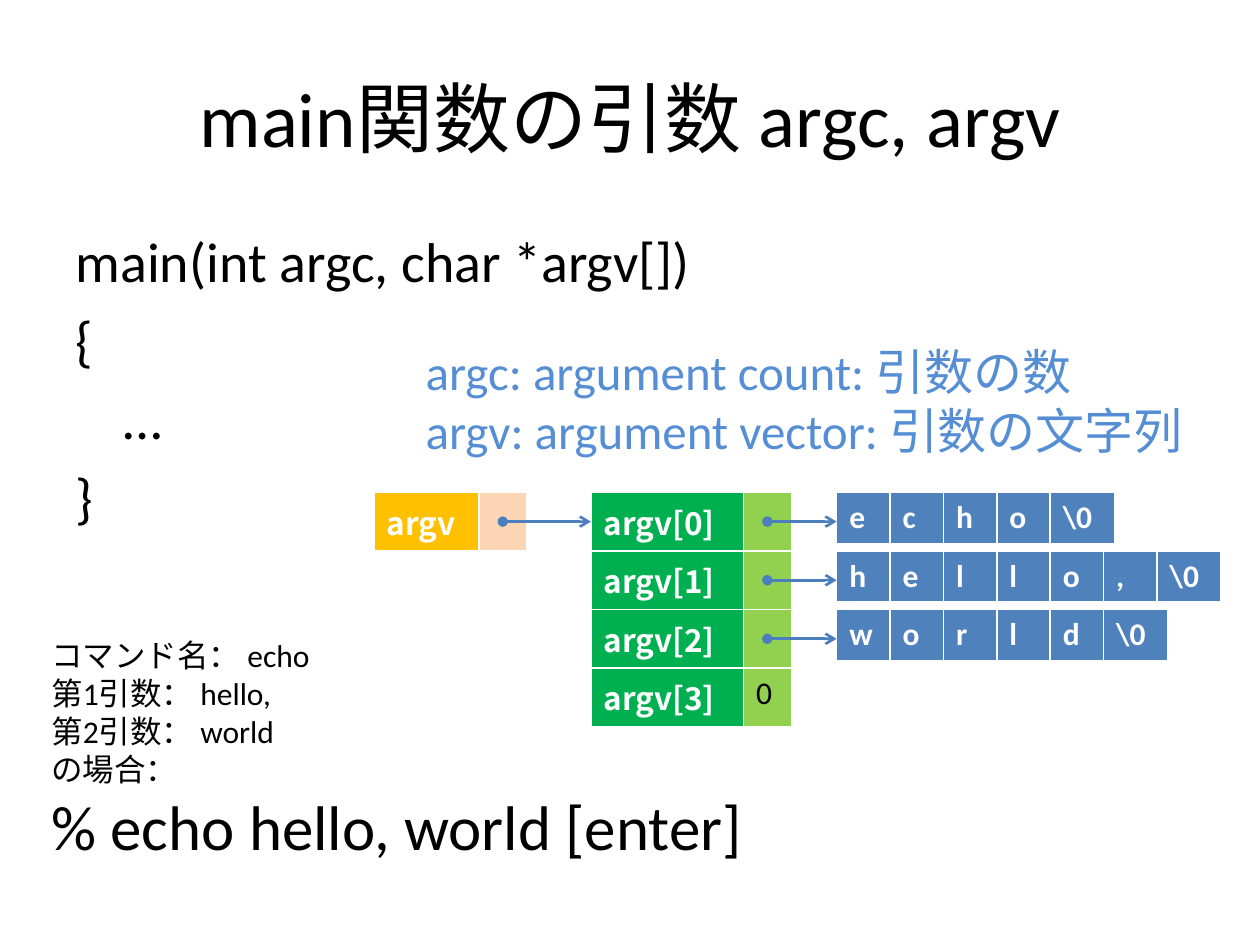
from lxml.etree import SubElement
from pptx import Presentation
from pptx.dml.color import RGBColor
from pptx.enum.shapes import MSO_CONNECTOR
from pptx.enum.text import MSO_ANCHOR, MSO_AUTO_SIZE, PP_ALIGN
from pptx.oxml.ns import qn
from pptx.util import Inches, Pt

BLACK = RGBColor(0x00, 0x00, 0x00)
WHITE = RGBColor(0xFF, 0xFF, 0xFF)
BLUE = RGBColor(0x4F, 0x81, 0xBD)
ARROW_BLUE = RGBColor(0x4B, 0x7E, 0xBC)
NOTE_BLUE = RGBColor(0x55, 0x8E, 0xD5)
GREEN = RGBColor(0x00, 0xB0, 0x50)
LIME = RGBColor(0x92, 0xD0, 0x50)
AMBER = RGBColor(0xFF, 0xC0, 0x00)
PEACH = RGBColor(0xFC, 0xD5, 0xB5)

LATIN = "Calibri"
GOTHIC = "Noto Sans CJK JP"

TITLE = "main関数の引数 argc, argv"
CODE = ["main(int argc, char *argv[])", "{", "\t…", "}"]
NOTES = ["argc: argument count: 引数の数", "argv: argument vector: 引数の文字列"]
COMMAND = ["コマンド名： echo", "第1引数： hello,", "第2引数： world", "の場合：",
           "% echo hello, world [enter]"]
POINTER = [["argv", ""]]
VECTOR = [["argv[0]", ""], ["argv[1]", ""], ["argv[2]", ""], ["argv[3]", "0"]]
STRINGS = [[*"echo", "\\0"], [*"hello,", "\\0"], [*"world", "\\0"]]

POINTER_LEFT, VECTOR_LEFT, STRING_LEFT = 29.7, 46.9, 66.4
POINTER_WIDTHS, VECTOR_WIDTHS = [8.3, 3.8], [12.1, 3.8]
LETTER_WIDTH, END_WIDTH = 4.24, 5.1
TABLE_TOP, ROW_HEIGHT, LETTER_HEIGHT = 52.1, 6.2, 5.4

deck = Presentation()
deck.slide_width, deck.slide_height = Inches(10), Inches(7.5)
page = deck.slides.add_slide(deck.slide_layouts[1])


def across(percent):
    return round(deck.slide_width * percent / 100)


def down(percent):
    return round(deck.slide_height * percent / 100)


def place(shape, left, top, width, height):
    shape.left, shape.top = across(left), down(top)
    shape.width, shape.height = across(width), down(height)


def write(frame, lines, size, color, font=LATIN, bold=False):
    frame.text = "\n".join(lines)
    for para in frame.paragraphs:
        para.font.size = Pt(size)
        for span in para.runs:
            span.font.size, span.font.name = Pt(size), font
            span.font.bold, span.font.color.rgb = bold, color


def add_text(lines, size, color, *area):
    box = page.shapes.add_textbox(0, 0, 0, 0)
    place(box, *area)
    write(box.text_frame, lines, size, color)
    box.text_frame.word_wrap = False
    box.text_frame.auto_size = MSO_AUTO_SIZE.SHAPE_TO_FIT_TEXT
    return box


def add_cells(rows, left, top, widths, height, fills, font, labelled):
    frame = page.shapes.add_table(len(rows), len(widths), across(left), down(top),
                                  across(sum(widths)), down(height * len(rows)))
    table = frame.table
    table.first_row, table.first_col, table.horz_banding = not labelled, labelled, False
    for column, width in zip(table.columns, widths):
        column.width = across(width)
    for row, words in zip(table.rows, rows):
        row.height = down(height)
        for index, (cell, word, fill) in enumerate(zip(row.cells, words, fills)):
            cell.fill.solid()
            cell.fill.fore_color.rgb = fill
            value = labelled and index > 0
            write(cell.text_frame, [word], 18, BLACK if value else WHITE,
                  LATIN if value else font, not value)


def add_arrow(start, end, height):
    arrow = page.shapes.add_connector(MSO_CONNECTOR.STRAIGHT, across(start), down(height),
                                      across(end), down(height))
    arrow.line.color.rgb = ARROW_BLUE
    arrow.line.width = Pt(1.5)
    line = arrow.line._get_or_add_ln()
    SubElement(line, qn("a:headEnd"), type="oval")
    SubElement(line, qn("a:tailEnd"), type="arrow")
    SubElement(arrow._element.spPr, qn("a:effectLst"))


title, body = page.placeholders
place(title, 5, 4, 90, 16.67)
write(title.text_frame, [TITLE], 44, BLACK)
title.text_frame.vertical_anchor = MSO_ANCHOR.MIDDLE
title.text_frame.paragraphs[0].alignment = PP_ALIGN.CENTER

place(body, 5, 23.33, 90, 66)
write(body.text_frame, CODE, 32, BLACK)
for para in body.text_frame.paragraphs:
    properties = para._p.get_or_add_pPr()
    properties.set("marL", str(Inches(0.38)))
    properties.set("indent", str(-Inches(0.38)))
    SubElement(properties, qn("a:buNone")) if properties.find(qn("a:defRPr")) is None else \
        properties.find(qn("a:defRPr")).addprevious(SubElement(properties, qn("a:buNone")))

command = add_text(COMMAND, 18, BLACK, 3.1, 66.67, 57.3, 25.6)
command.text_frame.paragraphs[-1].runs[0].font.size = Pt(36)

for index, letters in enumerate(STRINGS):
    widths = [LETTER_WIDTH] * (len(letters) - 1) + [END_WIDTH]
    add_cells([letters], STRING_LEFT, TABLE_TOP + index * ROW_HEIGHT, widths,
              LETTER_HEIGHT, [BLUE] * len(letters), LATIN, False)
add_cells(VECTOR, VECTOR_LEFT, TABLE_TOP, VECTOR_WIDTHS, ROW_HEIGHT,
          [GREEN, LIME], GOTHIC, True)
add_cells(POINTER, POINTER_LEFT, TABLE_TOP, POINTER_WIDTHS, ROW_HEIGHT,
          [AMBER, PEACH], GOTHIC, True)

pointer_center = POINTER_LEFT + POINTER_WIDTHS[0] + POINTER_WIDTHS[1] / 2
vector_center = VECTOR_LEFT + VECTOR_WIDTHS[0] + VECTOR_WIDTHS[1] / 2
middle = TABLE_TOP + ROW_HEIGHT / 2
add_arrow(pointer_center, VECTOR_LEFT, middle)
for index in range(len(STRINGS)):
    add_arrow(vector_center, STRING_LEFT, middle + index * ROW_HEIGHT)

add_text(NOTES, 28, NOTE_BLUE, 32.8, 35.5, 63.6, 13.9)

deck.save("out.pptx")
